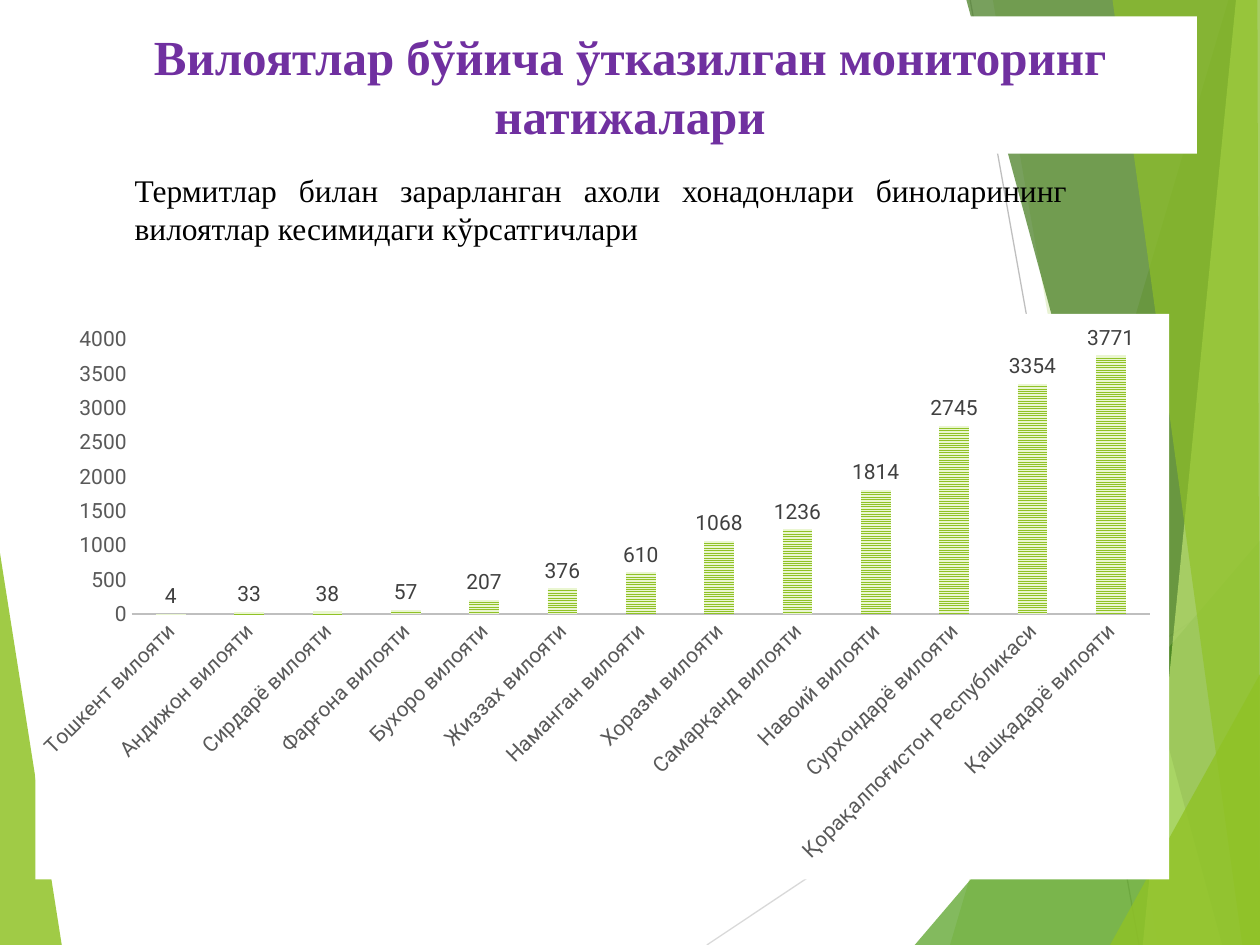
from dataclasses import dataclass

from lxml import etree
from pptx import Presentation
from pptx import util as u
from pptx.chart.data import CategoryChartData
from pptx.dml.color import RGBColor
from pptx.enum import chart as ch, dml, shapes, text
from pptx.oxml import parse_xml
from pptx.oxml.ns import nsdecls, qn

COLUMNS, ROWS = 100, 75
WIDTH, HEIGHT = u.Inches(10), u.Inches(7.5)
COLORS = {
    "white": "FFFFFF", "black": "000000", "purple": "7030A0",
    "lime": "90C226", "green": "54A021", "forest": "3F7819",
    "pale": "C0E474", "mist": "EAF6D1", "light_gray": "D9D9D9",
    "gray": "BFBFBF", "axis_text": "595959", "label_text": "404040",
}
SERIF, SANS = "Times New Roman", "Roboto"


@dataclass
class Facet:
    points: list[tuple[float, float]]
    color: str
    opacity: int


@dataclass
class Ray:
    start: tuple[float, float]
    end: tuple[float, float]
    color: str


@dataclass
class Caption:
    frame: tuple[float, float, float, float]
    words: str
    size: int
    color: str
    align: text.PP_ALIGN
    anchor: text.MSO_ANCHOR
    bold: bool = False
    fill: str | None = None


RAYS = [
    Ray((56.1, 75), (100, 45.7), "light_gray"),
    Ray((77, 0), (90.4, 75), "gray"),
]
LEFT_FACET = Facet([(0, 43.9), (4.9, 75), (0, 75)], "lime", 85)
RIGHT_FACETS = [
    Facet([(97.5, 0), (75.4, 75), (100, 75), (100, 0)], "lime", 30),
    Facet([(78.8, 0), (91.9, 75), (100, 75), (100, 0)], "lime", 20),
    Facet([(72.6, 75), (100, 42.9), (100, 75)], "green", 72),
    Facet([(76.7, 0), (97, 75), (100, 75), (100, 0)], "forest", 70),
    Facet([(98.1, 0), (90.7, 75), (100, 75), (100, 0)], "pale", 70),
    Facet([(88.3, 0), (98.6, 75), (100, 75), (99.8, 0)], "lime", 65),
    Facet([(88.1, 75), (100, 53.5), (100, 75)], "lime", 80),
]
TITLE = Caption((5, 1.3, 90, 10.9), "Вилоятлар бўйича ўтказилган мониторинг натижалари",
                28, "purple", text.PP_ALIGN.CENTER, text.MSO_ANCHOR.MIDDLE, True, "white")
SUBTITLE = Caption((9.7, 13.1, 76, 7.1),
                   "Термитлар билан зарарланган ахоли хонадонлари биноларининг "
                   "вилоятлар кесимидаги кўрсатгичлари",
                   18, "black", text.PP_ALIGN.JUSTIFY, text.MSO_ANCHOR.TOP)
CHART_FRAME = (2.8, 24.9, 90, 44.9)
PLOT_SHARES = {"x": 0.085, "y": 0.046, "w": 0.898, "h": 0.485}
BUILDINGS = {
    "Тошкент вилояти": 4, "Андижон вилояти": 33, "Сирдарё вилояти": 38,
    "Фарғона вилояти": 57, "Бухоро вилояти": 207, "Жиззах вилояти": 376,
    "Наманган вилояти": 610, "Хоразм вилояти": 1068, "Самарқанд вилояти": 1236,
    "Навоий вилояти": 1814, "Сурхондарё вилояти": 2745,
    "Қорақалпоғистон Республикаси": 3354, "Қашқадарё вилояти": 3771,
}


def rgb(name: str) -> RGBColor:
    return RGBColor.from_string(COLORS[name])


def grid(*lengths: float) -> list[int]:
    """Turn alternating columns and rows into slide units."""
    return [round(n * (HEIGHT / ROWS if i % 2 else WIDTH / COLUMNS))
            for i, n in enumerate(lengths)]


def style_font(font, size: int, color: str, name: str) -> None:
    font.size, font.name = u.Pt(size), name
    font.color.rgb = rgb(color)


def draw_facet(page, facet: Facet) -> None:
    first, *rest = [tuple(grid(*point)) for point in facet.points]
    builder = page.shapes.build_freeform(*first)
    builder.add_line_segments(rest, close=True)
    shape = builder.convert_to_shape()
    shape.shadow.inherit = False
    shape.line.fill.background()
    shape.fill.solid()
    shape.fill.fore_color.rgb = rgb(facet.color)
    tint = shape.fill._xPr.find(qn("a:solidFill"))[0]
    etree.SubElement(tint, qn("a:alpha"), val=str(facet.opacity * 1000))


def draw_ray(page, ray: Ray) -> None:
    line = page.shapes.add_connector(shapes.MSO_CONNECTOR.STRAIGHT,
                                     *grid(*ray.start, *ray.end))
    line.line.color.rgb = rgb(ray.color)
    line.line.width = u.Pt(0.75)
    etree.SubElement(line._element.spPr, qn("a:effectLst"))


def draw_caption(page, caption: Caption) -> None:
    box = page.shapes.add_textbox(*grid(*caption.frame))
    if caption.fill:
        box.fill.solid()
        box.fill.fore_color.rgb = rgb(caption.fill)
    frame = box.text_frame
    frame.word_wrap = True
    frame.vertical_anchor = caption.anchor
    para = frame.paragraphs[0]
    para.alignment = caption.align
    span = para.add_run()
    span.text = caption.words
    span.font.bold = caption.bold
    style_font(span.font, caption.size, caption.color, SERIF)


def place_plot(chart) -> None:
    """Fix the inner plot area and give the chart a white background."""
    space = chart._chartSpace
    plot_area = space.find(".//" + qn("c:plotArea"))
    for old in plot_area.findall(qn("c:layout")):
        plot_area.remove(old)
    shares = "".join(f'<c:{key} val="{val}"/>' for key, val in PLOT_SHARES.items())
    plot_area.insert(0, parse_xml(
        f'<c:layout {nsdecls("c")}><c:manualLayout><c:layoutTarget val="inner"/>'
        f'<c:xMode val="edge"/><c:yMode val="edge"/>{shares}</c:manualLayout></c:layout>'))
    space.find(qn("c:chart")).addnext(parse_xml(
        f'<c:spPr {nsdecls("c", "a")}><a:solidFill><a:srgbClr val="{COLORS["white"]}"/>'
        '</a:solidFill><a:ln><a:noFill/></a:ln></c:spPr>'))


def draw_chart(page) -> None:
    data = CategoryChartData()
    data.categories = list(BUILDINGS)
    data.add_series("Series 1", list(BUILDINGS.values()))
    chart = page.shapes.add_chart(ch.XL_CHART_TYPE.COLUMN_CLUSTERED,
                                  *grid(*CHART_FRAME), data).chart
    chart.has_title = chart.has_legend = False
    style_font(chart.font, 10, "black", SANS)
    place_plot(chart)

    for axis in (chart.category_axis, chart.value_axis):
        axis.has_major_gridlines = False
        axis.major_tick_mark = axis.minor_tick_mark = ch.XL_TICK_MARK.NONE
        style_font(axis.tick_labels.font, 12, "axis_text", SANS)
    names, scale = chart.category_axis, chart.value_axis
    names.format.line.color.rgb = rgb("gray")
    names.format.line.width = u.Pt(1.5)
    names._element.find(qn("c:txPr")).find(qn("a:bodyPr")).set("rot", "-2700000")
    scale.format.line.fill.background()
    scale.minimum_scale, scale.maximum_scale, scale.major_unit = 0, 4000, 500

    plot = chart.plots[0]
    plot.gap_width, plot.overlap, plot.vary_by_categories = 164, -22, False
    fill = plot.series[0].format.fill
    fill.patterned()
    fill.pattern = dml.MSO_PATTERN.NARROW_HORIZONTAL
    fill.fore_color.rgb, fill.back_color.rgb = rgb("lime"), rgb("mist")
    labels = plot.series[0].data_labels
    labels.show_value = True
    labels.position = ch.XL_LABEL_POSITION.OUTSIDE_END
    style_font(labels.font, 12, "label_text", SANS)


def main() -> None:
    deck = Presentation()
    deck.slide_width, deck.slide_height = WIDTH, HEIGHT
    page = deck.slides.add_slide(deck.slide_layouts[6])
    draw_facet(page, LEFT_FACET)
    for ray in RAYS:
        draw_ray(page, ray)
    for facet in RIGHT_FACETS:
        draw_facet(page, facet)
    draw_caption(page, TITLE)
    draw_chart(page)
    draw_caption(page, SUBTITLE)
    deck.save("out.pptx")


if __name__ == "__main__":
    main()
